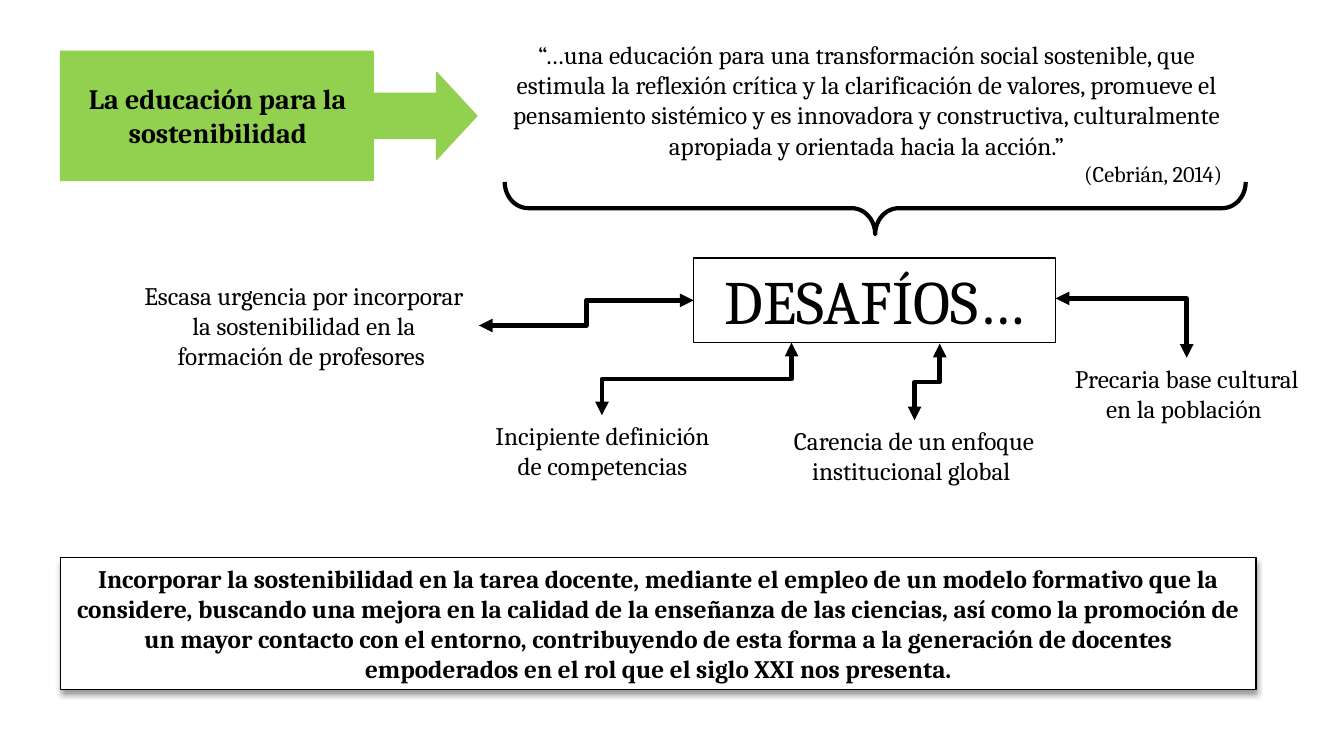
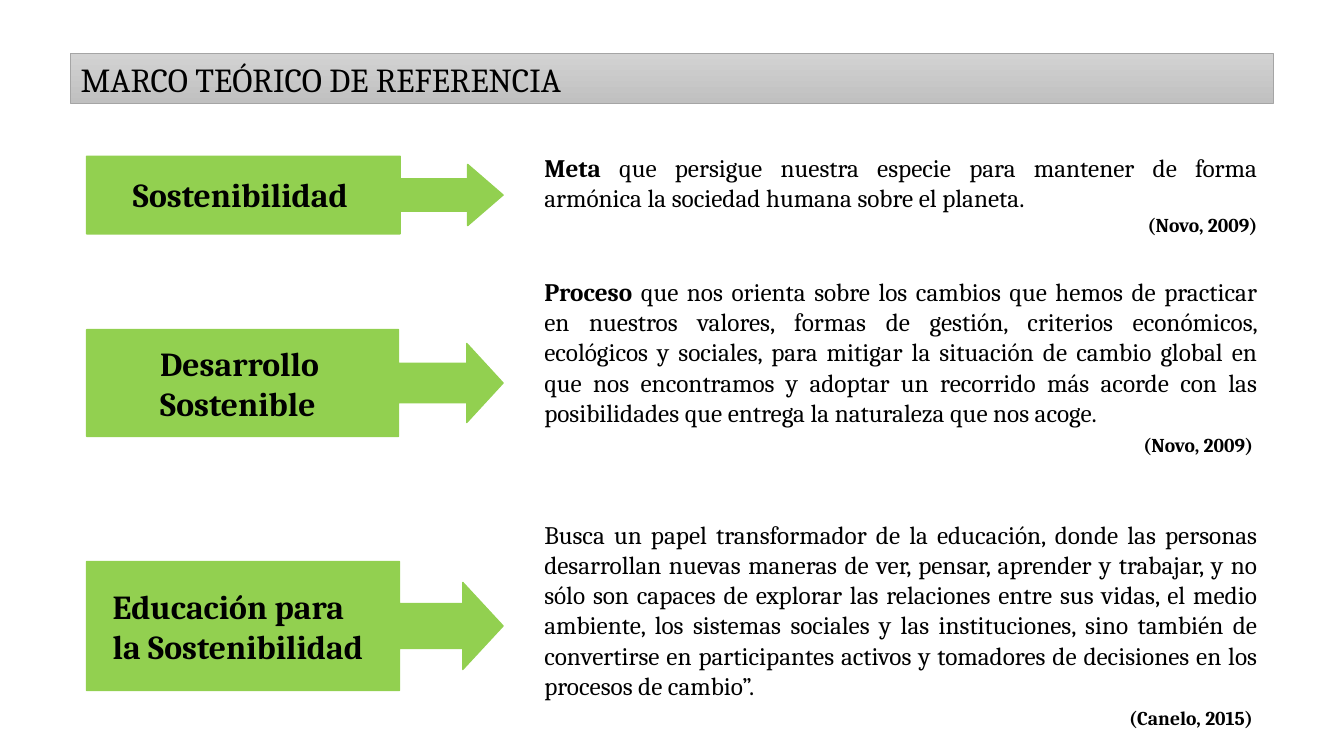
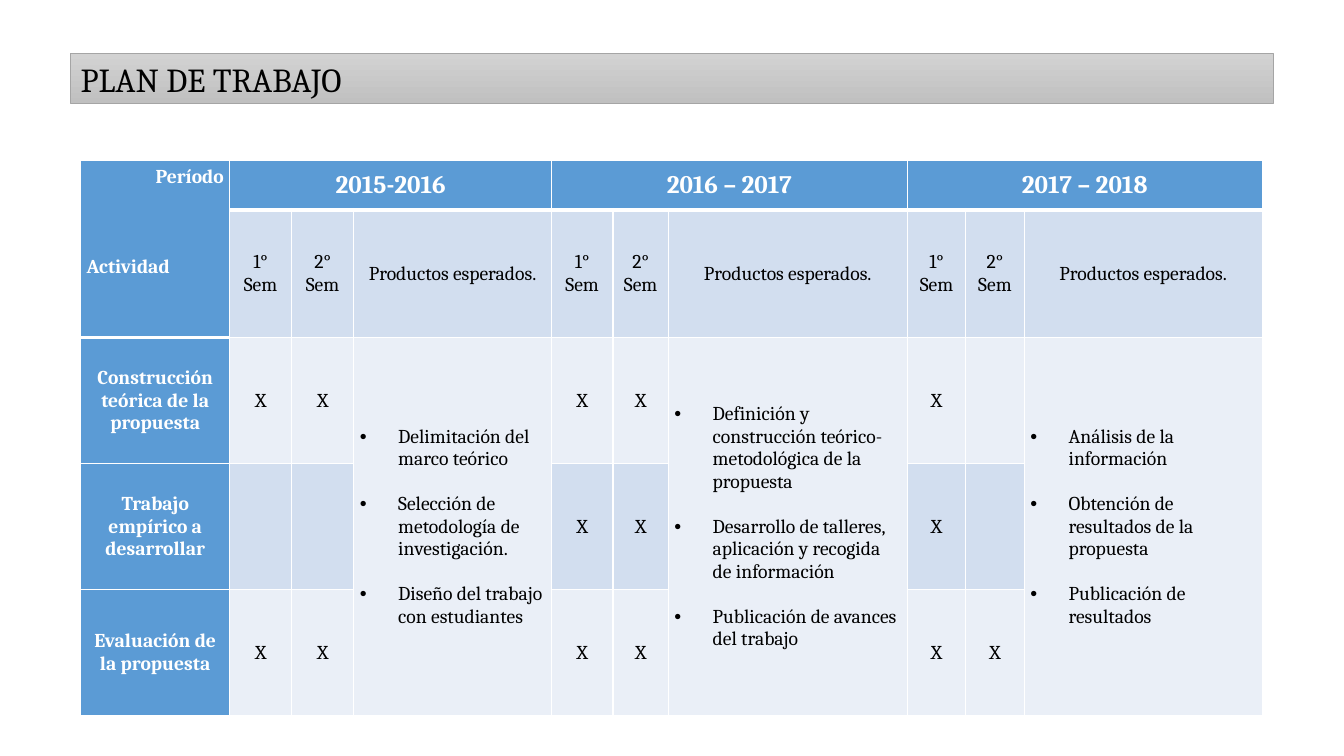
from lxml import etree
from pptx import Presentation
from pptx.dml.color import RGBColor
from pptx.enum.shapes import MSO_CONNECTOR as Link, MSO_SHAPE as Form
from pptx.enum.text import MSO_ANCHOR as Anchor, PP_ALIGN as Al
from pptx.oxml import parse_xml
from pptx.oxml.ns import nsdecls, qn
from pptx.util import Inches, Pt

FONT = "Cambria"
BLACK, WHITE, GREEN = "000000", "FFFFFF", "92D050"
BLUE, PALE, LIGHT = "5B9BD5", "D2DEEF", "EAEFF7"


def color(code):
    return RGBColor.from_string(code)


class Deck:
    def __init__(self):
        self.prs = Presentation()
        self.prs.slide_width = Inches(13.33)
        self.prs.slide_height = Inches(7.5)

    def page(self, title=None):
        layout = self.prs.slide_layouts[5 if title else 6]
        self.slide = self.prs.slides.add_slide(layout)
        self.shapes = self.slide.shapes
        if title:
            self.band(title)

    def band(self, text):
        """Grey gradient band that holds the slide title."""
        bar = self.shapes.title
        bar.left, bar.top = Inches(0.7), Inches(0.53)
        bar.width, bar.height = Inches(11.93), Inches(0.5)
        bar.fill.gradient()
        bar.fill.gradient_angle = 270
        for stop, tone in zip(bar.fill.gradient_stops, ("D2D2D2", "C0C0C0")):
            stop.color.rgb = color(tone)
        self.edge(bar, "A5A5A5", 0.5)
        bar.text_frame.vertical_anchor = Anchor.MIDDLE
        self.put(bar.text_frame.paragraphs[0], text, 24, align=Al.LEFT)

    def edge(self, shape, tone, width):
        shape.line.color.rgb = color(tone)
        shape.line.width = Pt(width)

    def put(self, par, text, size=18, bold=False, align=Al.CENTER,
            tone=BLACK, gap=0, lead=""):
        """Fill a paragraph; lead is an opening word in bold."""
        par.text = lead or text
        if lead:
            par.add_run().text = text
        par.alignment = align
        par.space_before = Pt(gap)
        for pos, run in enumerate(par.runs):
            font = run.font
            font.name, font.size = FONT, Pt(size)
            font.bold = bold or (bool(lead) and pos == 0)
            font.color.rgb = color(tone)

    def text(self, x, y, w, h, text, *args, **style):
        box = self.shapes.add_textbox(Inches(x), Inches(y), Inches(w), Inches(h))
        frame = box.text_frame
        frame.word_wrap = True
        self.put(frame.paragraphs[0], text, *args, **style)
        return frame

    def quote(self, x, y, w, h, text, source, size, bold=False, gap=0, **style):
        """Text followed by its source at the right."""
        frame = self.text(x, y, w, h, text, **style)
        self.put(frame.add_paragraph(), source, size, bold, Al.RIGHT, gap=gap)

    def shape(self, form, x, y, w, h, fill=None, tone=BLACK, width=1, adj=()):
        item = self.shapes.add_shape(
            form, Inches(x), Inches(y), Inches(w), Inches(h))
        item.shadow.inherit = False
        if fill:
            item.fill.solid()
            item.fill.fore_color.rgb = color(fill)
        else:
            item.fill.background()
        self.edge(item, tone, width)
        for pos, val in enumerate(adj):
            item.adjustments[pos] = val
        return item

    def panel(self, x, y, w, h, text, size, bold=False):
        item = self.shape(Form.RECTANGLE, x, y, w, h, WHITE)
        item.text_frame.word_wrap = True
        self.put(item.text_frame.paragraphs[0], text, size, bold)
        return item

    def callout(self, x, y, h, adj):
        self.shape(Form.RIGHT_ARROW_CALLOUT, x, y, 4.13, h, GREEN, GREEN, adj=adj)

    def shade(self, item):
        fx = item._element.spPr.find(qn("a:effectLst"))
        fx.append(parse_xml(
            f'<a:outerShdw {nsdecls("a")} blurRad="50800" dist="38100" '
            'dir="5400000" algn="t" rotWithShape="0"><a:srgbClr val="000000">'
            '<a:alpha val="40000"/></a:srgbClr></a:outerShdw>'))

    def elbow(self, x1, y1, x2, y2, upright=False, corner=False):
        """Two-headed bent arrow; upright leaves its start vertically."""
        if upright:
            # Turn both ends back a quarter about the centre
            cx, cy = (x1 + x2) / 2, (y1 + y2) / 2
            dx, dy = x1 - cx, y1 - cy
            x1, y1, x2, y2 = cx + dy, cy - dx, cx - dy, cy + dx
        link = self.shapes.add_connector(
            Link.ELBOW, Inches(x1), Inches(y1), Inches(x2), Inches(y2))
        self.edge(link, BLACK, 3.25)
        prop = link._element.spPr
        if upright:
            prop.find(qn("a:xfrm")).set("rot", "5400000")
        if corner:
            prop.find(qn("a:prstGeom")).set("prst", "bentConnector2")
        for end in ("a:headEnd", "a:tailEnd"):
            etree.SubElement(prop.find(qn("a:ln")), qn(end), type="triangle")
        etree.SubElement(prop, qn("a:effectLst"))

    def grid(self, x, y, cols, rows):
        table = self.shapes.add_table(
            len(rows), len(cols), Inches(x), Inches(y),
            Inches(sum(cols)), Inches(sum(rows))).table
        for col, w in zip(table.columns, cols):
            col.width = Inches(w)
        for row, h in zip(table.rows, rows):
            row.height = Inches(h)
        return table

    def cell(self, cell, fill, base=1):
        """Fill, margins and white borders; base is the bottom border."""
        cell.fill.solid()
        cell.fill.fore_color.rgb = color(fill)
        cell.vertical_anchor = Anchor.MIDDLE
        cell.margin_left = cell.margin_right = Inches(0.06)
        cell.margin_top = cell.margin_bottom = Inches(0.06)
        prop = cell._tc.get_or_add_tcPr()
        for pos, side in enumerate("LRTB"):
            width = Pt(base if side == "B" else 1)
            prop.insert(pos, parse_xml(
                f'<a:ln{side} {nsdecls("a")} w="{width}"><a:solidFill>'
                f'<a:srgbClr val="{WHITE}"/></a:solidFill></a:ln{side}>'))

    def bullets(self, frame, items):
        for pos, item in enumerate(items):
            par = frame.add_paragraph() if pos else frame.paragraphs[0]
            self.put(par, item, 14, align=Al.LEFT, gap=16 if pos else 0)
            prop = par._p.get_or_add_pPr()
            prop.set("marL", str(Inches(0.38)))
            prop.set("indent", str(-Inches(0.38)))
            etree.SubElement(prop, qn("a:buFont"), typeface="Arial")
            etree.SubElement(prop, qn("a:buChar"), char="•")


def goals(deck):
    deck.page()
    # Definition
    deck.callout(0.6, 0.51, 1.28, (0.349, 0.337, 0.312, 0.751))
    deck.text(0.72, 0.76, 2.88, 0.77, "La educación para la sostenibilidad", 20, True)
    deck.quote(4.92, 0.34, 7.35, 1.62,
               "“…una educación para una transformación social sostenible, que "
               "estimula la reflexión crítica y la clarificación de valores, "
               "promueve el pensamiento sistémico y es innovadora y constructiva, "
               "culturalmente apropiada y orientada hacia la acción.”",
               "(Cebrián, 2014) ", 16)
    brace = deck.shape(Form.RIGHT_BRACE, 8.42, -1.61, 0.52, 7.35,
                       width=3, adj=(0.449, 0.5))
    brace.rotation = 90
    # Challenges
    deck.panel(6.88, 2.56, 3.59, 0.84, "DESAFÍOS…", 44)
    for x, y, w, h, text in (
            (4.75, 4.12, 2.45, 0.71, "Incipiente definición de competencias"),
            (7.67, 4.17, 2.79, 0.71, "Carencia de un enfoque institucional global "),
            (10.47, 3.55, 2.6, 0.71, "Precaria base cultural en la población "),
            (1.28, 2.73, 3.47, 1.01, "Escasa urgencia por incorporar la "
             "sostenibilidad en la formación de profesores ")):
        deck.text(x, y, w, h, text)
    deck.elbow(5.97, 4.12, 7.85, 3.4, upright=True)
    deck.elbow(9.07, 4.17, 9.32, 3.41, upright=True)
    deck.elbow(10.47, 2.96, 11.77, 3.55, corner=True)
    deck.elbow(4.75, 3.23, 6.88, 2.98)
    # Aim
    deck.shade(deck.panel(
        0.6, 5.53, 11.86, 1.31,
        "Incorporar la sostenibilidad en la tarea docente, mediante el empleo de "
        "un modelo formativo que la considere, buscando una mejora en la calidad "
        "de la enseñanza de las ciencias, así como la promoción de un mayor "
        "contacto con el entorno, contribuyendo de esta forma a la generación de "
        "docentes empoderados en el rol que el siglo XXI nos presenta.", 18, True))


def theory(deck):
    deck.page("MARCO TEÓRICO DE REFERENCIA")
    # Term: callout top, height, adjustments; label box
    for y, h, adj, spot, term in (
            (1.55, 0.77, (0.415, 0.394, 0.456, 0.753),
             (1.22, 1.68, 2.43, 0.5), "Sostenibilidad"),
            (3.27, 1.06, (0.37, 0.37, 0.34, 0.749),
             (1.49, 3.35, 1.89, 0.91), "Desarrollo Sostenible"),
            (5.57, 1.28, (0.349, 0.337, 0.312, 0.751),
             (1.02, 5.76, 2.83, 0.91), "Educación para la Sostenibilidad")):
        deck.callout(0.86, y, h, adj)
        deck.text(*spot, term, 24, True, Al.LEFT)
    # Meaning and source
    for y, h, lead, text, source, gap in (
            (1.46, 0.94, "Meta ",
             "que persigue nuestra especie para mantener de forma armónica la "
             "sociedad humana sobre el planeta.", "(Novo, 2009)", 0),
            (2.69, 2.22, "Proceso ",
             "que nos orienta sobre los cambios que hemos de practicar en nuestros "
             "valores, formas de gestión, criterios económicos, ecológicos y "
             "sociales, para mitigar la situación de cambio global en que nos "
             "encontramos y adoptar un recorrido más acorde con las posibilidades "
             "que entrega la naturaleza que nos acoge.", "(Novo, 2009) ", 4),
            (5.1, 2.22, "",
             "Busca un papel transformador de la educación, donde las personas "
             "desarrollan nuevas maneras de ver, pensar, aprender y trabajar, y no "
             "sólo son capaces de explorar las relaciones entre sus vidas, el medio "
             "ambiente, los sistemas sociales y las instituciones, sino también de "
             "convertirse en participantes activos y tomadores de decisiones en los "
             "procesos de cambio”.", "(Canelo, 2015) ", 4)):
        deck.quote(5.3, y, 7.27, h, text, source, 14, True, gap,
                   align=Al.JUSTIFY, lead=lead)


def plan(deck):
    deck.page("PLAN DE TRABAJO")
    table = deck.grid(
        0.8, 1.59, (1.48, 0.61, 0.62, 1.96, 0.61, 0.55, 2.37, 0.58, 0.58, 2.36),
        (0.49, 1.27, 1.25, 1.25, 1.25))
    # Cell colours and borders
    for r, row in enumerate(table.rows):
        for c, cell in enumerate(row.cells):
            head = r == 0 or c == 0
            merged = r > 1 and c and c % 3 == 0
            fill = BLUE if head else LIGHT if merged or r % 2 == 0 else PALE
            deck.cell(cell, fill, 3 if r == 0 or (r == 1 and c == 0) else 1)

    def fill(r, c, text, size=14, **style):
        deck.put(table.cell(r, c).text_frame.paragraphs[0], text, size, **style)

    # Corner and activities
    corner = table.cell(0, 0)
    corner.merge(table.cell(1, 0))
    corner.vertical_anchor = Anchor.TOP
    title = dict(bold=True, tone=WHITE)
    fill(0, 0, "Período", align=Al.RIGHT, **title)
    deck.put(corner.text_frame.add_paragraph(), "Actividad", 14,
             align=Al.LEFT, gap=48, **title)
    for r, text in enumerate(("Construcción teórica de la propuesta",
                              "Trabajo empírico a desarrollar",
                              "Evaluación de la propuesta"), 2):
        fill(r, 0, text, **title)
    # Years: marks per activity and expected products
    years = (
        ("2015-2016", ("XX", "", "XX"),
         ("Delimitación del marco teórico",
          "Selección de metodología de investigación.",
          "Diseño del trabajo con estudiantes")),
        ("2016 – 2017", ("XX", "XX", "XX"),
         ("Definición y construcción teórico-metodológica de la propuesta",
          "Desarrollo de talleres, aplicación y recogida de información",
          "Publicación de avances del trabajo")),
        ("2017 – 2018", ("X", "X", "XX"),
         ("Análisis de la información",
          "Obtención de resultados de la propuesta",
          "Publicación de resultados")))
    for pos, (year, marks, goods) in enumerate(years):
        c = 1 + 3 * pos
        table.cell(0, c).merge(table.cell(0, c + 2))
        fill(0, c, year, 18, **title)
        for k, text in enumerate(("1° Sem", "2° Sem", "Productos esperados.")):
            fill(1, c + k, text)
        for r, line in enumerate(marks, 2):
            for k, mark in enumerate(line):
                fill(r, c + k, mark)
        table.cell(2, c + 2).merge(table.cell(4, c + 2))
        deck.bullets(table.cell(2, c + 2).text_frame, goods)


def main():
    deck = Deck()
    for build in (goals, theory, plan):
        build(deck)
    deck.prs.save("out.pptx")


if __name__ == "__main__":
    main()
